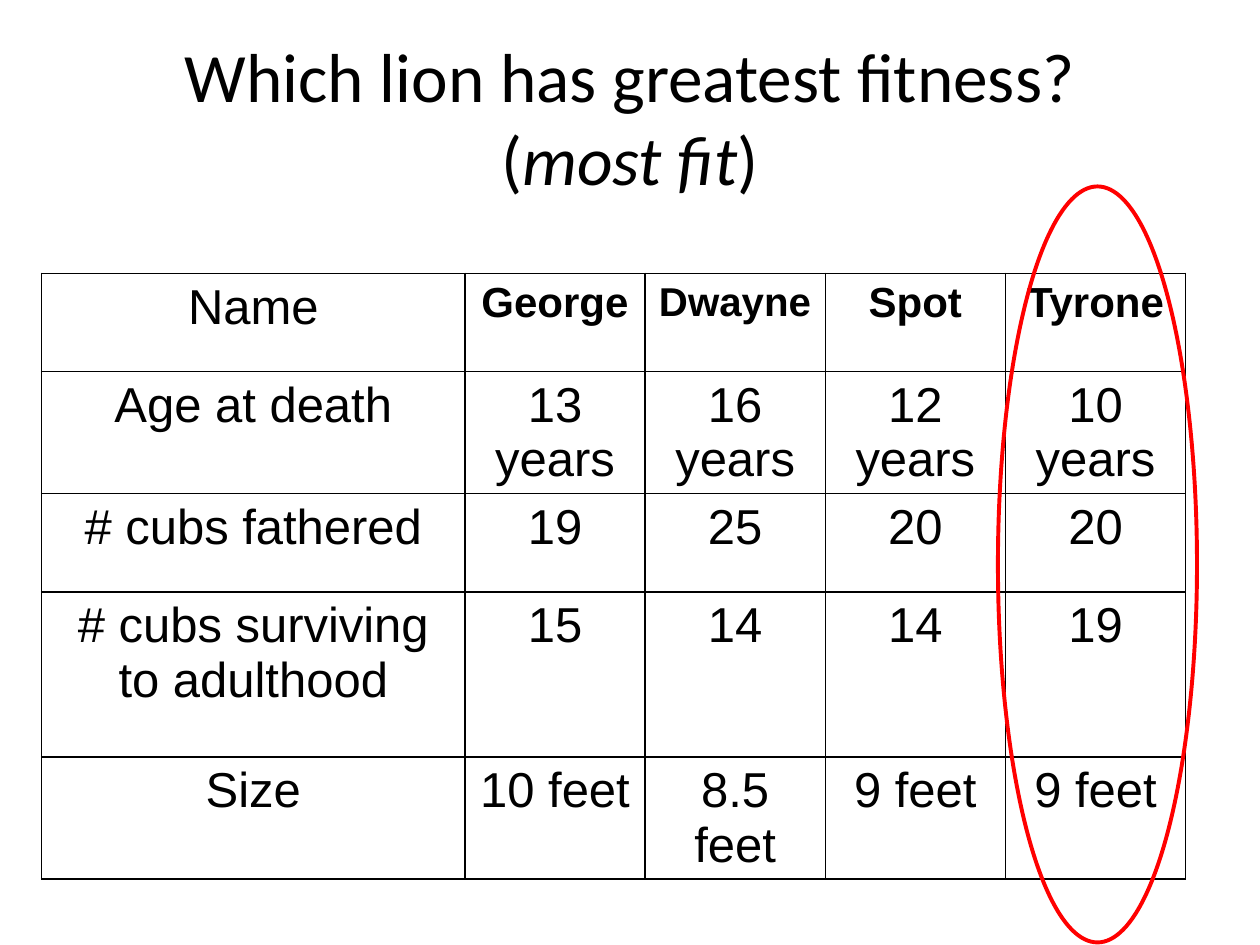
from lxml.etree import SubElement as Sub
from pptx import Presentation
from pptx.dml.color import RGBColor
from pptx.enum.shapes import MSO_SHAPE as Shape
from pptx.enum.text import MSO_ANCHOR as Anchor, PP_ALIGN as Align
from pptx.oxml.ns import qn
from pptx.util import Inches, Pt


def color(code):
    return RGBColor.from_string(code)


def add_run(para, text, font, size, bold=False, italic=False):
    run = para.add_run()
    run.text = text
    run.font.name = font
    run.font.size = Pt(size)
    run.font.bold = bold
    run.font.italic = italic
    run.font.color.rgb = color("000000")


deck = Presentation()
deck.slide_width, deck.slide_height = Inches(10), Inches(7.5)
slide = deck.slides.add_slide(deck.slide_layouts[6])

# Table of lions
rows = [
    ["Name", "George", "Dwayne", "Spot", "Tyrone"],
    ["Age at death", "13 years", "16 years", "12 years", "10 years"],
    ["# cubs fathered", "19", "25", "20", "20"],
    ["# cubs surviving to adulthood", "15", "14", "14", "19"],
    ["Size", "10 feet", "8.5 feet", "9 feet", "9 feet"],
]
widths = [3.36] + [1.43] * 4
heights = [0.78, 0.78, 0.78, 1.31, 0.77]
table = slide.shapes.add_table(
    len(rows), len(widths), Inches(0.33), Inches(2.17),
    Inches(sum(widths)), Inches(sum(heights))).table
table.first_row = table.horz_banding = False
for col, width in zip(table.columns, widths):
    col.width = Inches(width)
for row, height in zip(table.rows, heights):
    row.height = Inches(height)

for r, row in enumerate(rows):
    for c, text in enumerate(row):
        cell = table.cell(r, c)
        name = r == 0 and c > 0
        size = 28
        if name:
            size = 23 if text == "Dwayne" else 24
        para = cell.text_frame.paragraphs[0]
        para.alignment = Align.CENTER
        add_run(para, text, "Arial", size, bold=name)
        props = cell._tc.get_or_add_tcPr()
        for side in ("lnL", "lnR", "lnT", "lnB"):
            line = Sub(props, qn(f"a:{side}"), w=str(Pt(1)))
            fill = Sub(line, qn("a:solidFill"))
            Sub(fill, qn("a:srgbClr"), val="000000")
        cell.fill.background()

# Ring around the fittest lion
ring = slide.shapes.add_shape(
    Shape.OVAL, Inches(7.92), Inches(1.48), Inches(1.58), Inches(6))
ring.shadow.inherit = False
ring.fill.background()
ring.line.color.rgb = color("FF0000")
ring.line.width = Pt(2.25)

# Title
title = slide.shapes.add_textbox(
    Inches(0.5), Inches(0.3), Inches(9), Inches(1.25))
frame = title.text_frame
frame.word_wrap = True
frame.vertical_anchor = Anchor.MIDDLE
para = frame.paragraphs[0]
para.alignment = Align.CENTER
add_run(para, "Which lion has greatest fitness?", "Calibri", 39.6)
para.add_line_break()
add_run(para, "(", "Calibri", 39.6)
add_run(para, "most fit", "Calibri", 39.6, italic=True)
add_run(para, ")", "Calibri", 39.6)

deck.save("out.pptx")
